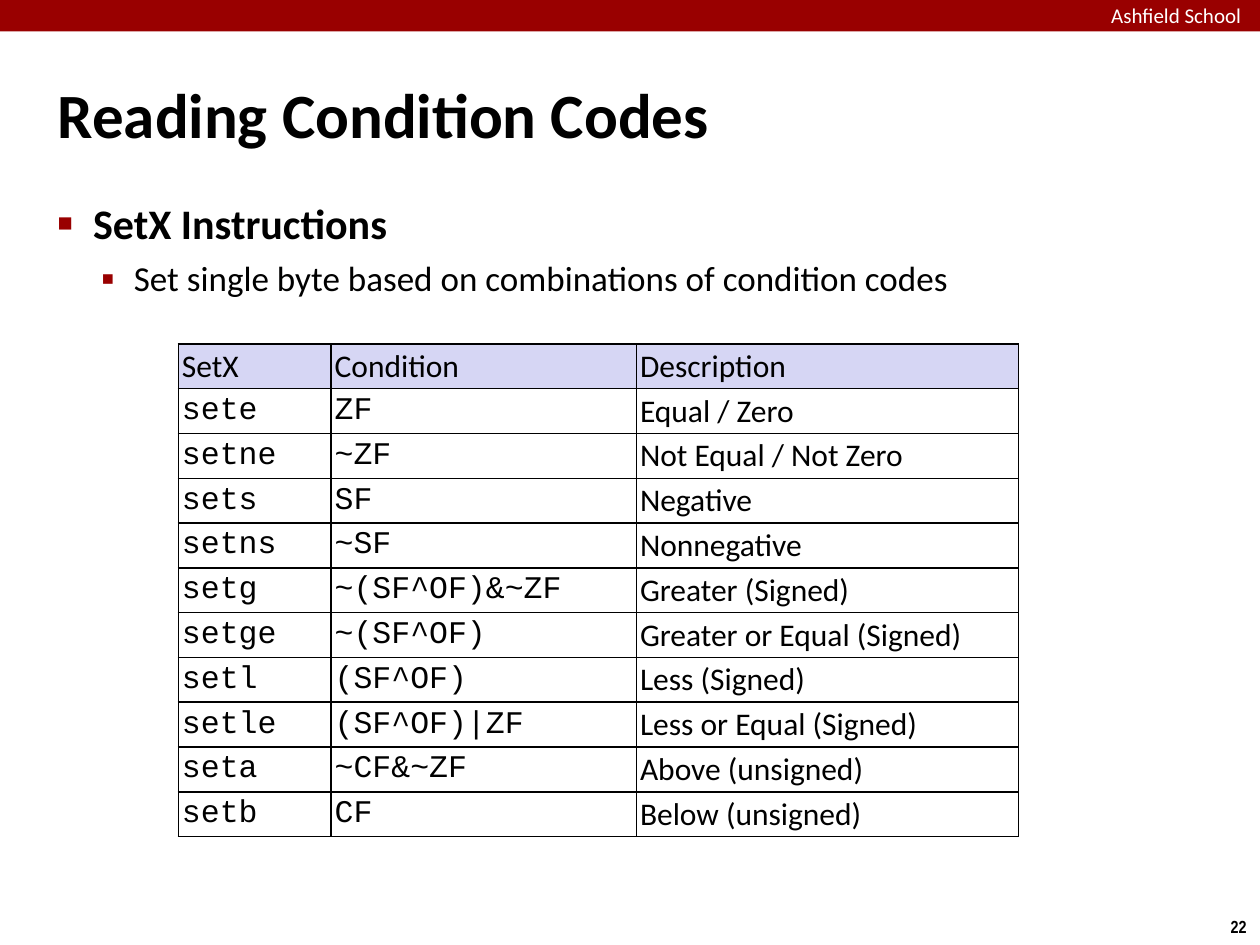
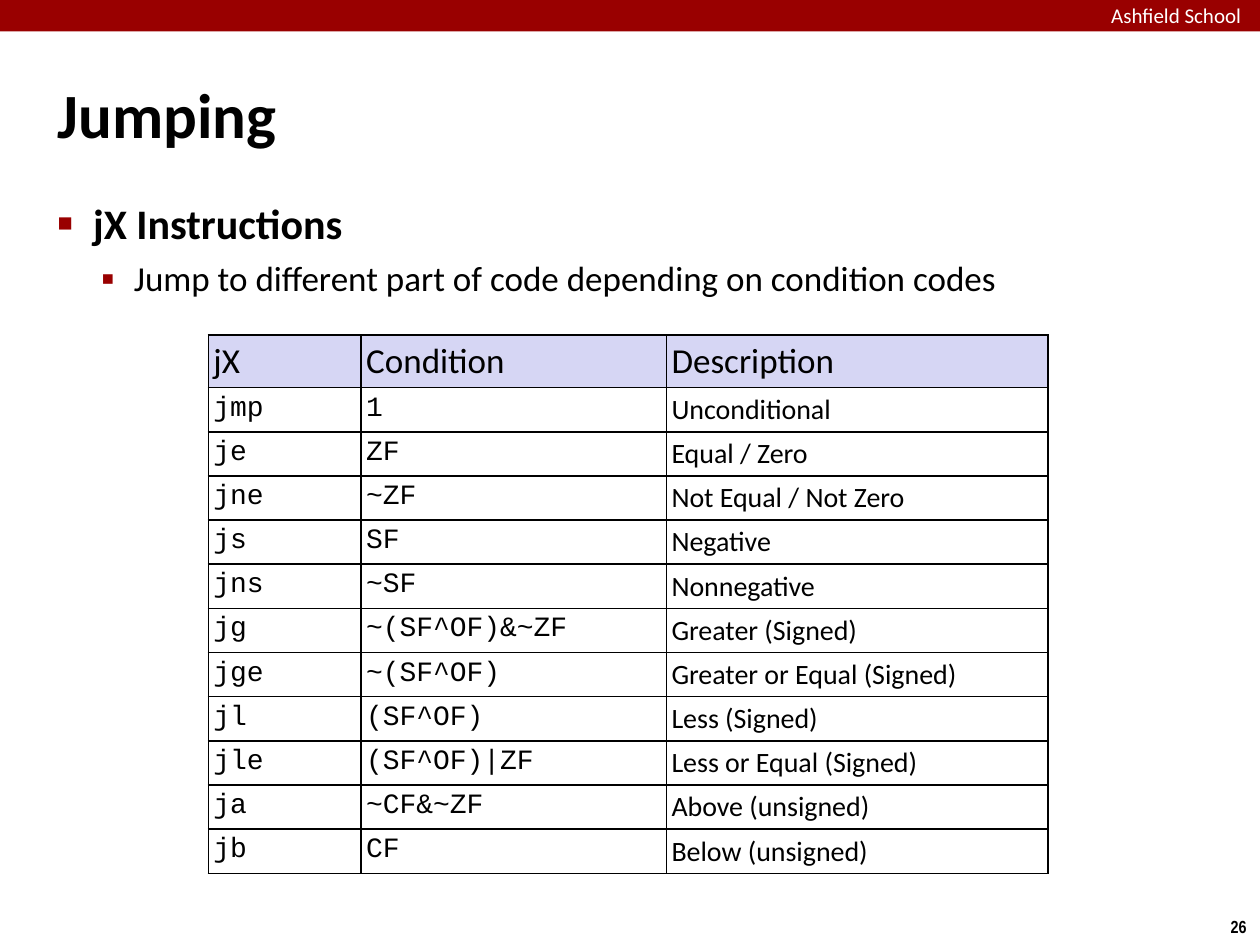
"""Build two slides that tabulate the set and jump instructions by condition code."""
from dataclasses import dataclass

from lxml import etree
from pptx import Presentation
from pptx import util as u
from pptx.dml.color import RGBColor
from pptx.enum import shapes, text
from pptx.oxml import ns

Pt = u.Pt

RED = RGBColor(0x99, 0x00, 0x00)
LAVENDER = RGBColor(0xD6, 0xD6, 0xF4)
BLACK = RGBColor(0x00, 0x00, 0x00)
WHITE = RGBColor(0xFF, 0xFF, 0xFF)

SANS = "Calibri"
MONO = "Courier New"
NARROW = "Arial Narrow"

SCHOOL = "Ashfield School"
COLUMN_WIDTHS = (87.3, 174.5, 218.2)
COLUMN_FONTS = (MONO, MONO, SANS)

CONDITIONS = (
    ("e", "ZF", "Equal / Zero"),
    ("ne", "~ZF", "Not Equal / Not Zero"),
    ("s", "SF", "Negative"),
    ("ns", "~SF", "Nonnegative"),
    ("g", "~(SF^OF)&~ZF", "Greater (Signed)"),
    ("ge", "~(SF^OF)", "Greater or Equal (Signed)"),
    ("l", "(SF^OF)", "Less (Signed)"),
    ("le", "(SF^OF)|ZF", "Less or Equal (Signed)"),
    ("a", "~CF&~ZF", "Above (unsigned)"),
    ("b", "CF", "Below (unsigned)"),
)


@dataclass(frozen=True)
class BulletLevel:
    """Look of one list level, with lengths in points."""
    indent: float
    hanging: float
    before: float
    char: str
    char_percent: int
    size: float
    bold: bool


@dataclass(frozen=True)
class InstructionTable:
    """Place, sizes and rows of an instruction table, in points."""
    left: float
    top: float
    family: str
    prefix: str
    extra_rows: tuple
    header_size: float
    header_height: float
    body_size: float
    row_height: float
    inset: float
    anchor: text.MSO_ANCHOR


@dataclass(frozen=True)
class InstructionSlide:
    """Content of one slide."""
    number: int
    title: str
    bullets: tuple
    body_height: float
    table: InstructionTable


LEVELS = (
    BulletLevel(20.25, 20.25, 6, "■", 60, 24, True),
    BulletLevel(43.5, 18.75, 5, "▪", 110, 20, False),
)

SLIDES = (
    InstructionSlide(
        22, "Reading Condition Codes",
        ("SetX Instructions",
         "Set single byte based on combinations of condition codes"),
        428,
        InstructionTable(102, 196.5, "SetX", "set", (), 18, 25.6, 18, 25.6, 2,
                         text.MSO_ANCHOR.MIDDLE)),
    InstructionSlide(
        26, "Jumping",
        ("jX Instructions",
         "Jump to different part of code depending on condition codes"),
        67.5,
        InstructionTable(119, 191.5, "jX", "j", (("mp", "1", "Unconditional"),),
                         20, 29.6, 16, 25.25, 3, text.MSO_ANCHOR.TOP)),
)


def add_run(p, content: str, size: float, font: str = SANS,
            color: RGBColor = BLACK, bold: bool = False) -> None:
    """Append a formatted run to a paragraph."""
    r = p.add_run()
    r.text = content
    r.font.size = Pt(size)
    r.font.name = font
    r.font.bold = bold
    r.font.color.rgb = color


def set_insets(target, inset: float) -> None:
    """Give a text frame or cell the same inset on every side."""
    target.margin_left = target.margin_right = Pt(inset)
    target.margin_top = target.margin_bottom = Pt(inset)


def set_indent(p, indent: float, hanging: float) -> None:
    """Set the left margin and hanging indent of a paragraph."""
    p_pr = p._p.get_or_add_pPr()
    p_pr.set("marL", str(int(Pt(indent))))
    p_pr.set("indent", str(-int(Pt(hanging))))


def set_bullet(p, level: BulletLevel) -> None:
    """Give a paragraph the bullet of its level."""
    p_pr = p._p.get_or_add_pPr()
    color = etree.SubElement(p_pr, ns.qn("a:buClr"))
    etree.SubElement(color, ns.qn("a:srgbClr"), val=str(RED))
    etree.SubElement(p_pr, ns.qn("a:buSzPct"), val=str(level.char_percent * 1000))
    etree.SubElement(p_pr, ns.qn("a:buFont"), typeface="Arial")
    etree.SubElement(p_pr, ns.qn("a:buChar"), char=level.char)


def set_borders(cell) -> None:
    """Draw a one-point black border around a cell."""
    tc_pr = cell._tc.get_or_add_tcPr()
    for side in ("lnL", "lnR", "lnT", "lnB"):
        ln = etree.SubElement(tc_pr, ns.qn(f"a:{side}"), w=str(int(Pt(1))))
        fill = etree.SubElement(ln, ns.qn("a:solidFill"))
        etree.SubElement(fill, ns.qn("a:srgbClr"), val=str(BLACK))


def place(sp, left: float, top: float, width: float, height: float):
    """Move and size a placeholder and return its text frame."""
    sp.left, sp.top, sp.width, sp.height = map(Pt, (left, top, width, height))
    tf = sp.text_frame
    tf.word_wrap = True
    tf.auto_size = text.MSO_AUTO_SIZE.NONE
    set_insets(tf, 3)
    return tf


def add_frame(s, number: int) -> None:
    """Draw the top band, the school name and the slide number."""
    band = s.shapes.add_shape(shapes.MSO_SHAPE.RECTANGLE, 0, 0, Pt(720), Pt(18))
    band.shadow.inherit = False
    band.fill.solid()
    band.fill.fore_color.rgb = RED
    band.line.fill.background()

    school = s.shapes.add_textbox(Pt(635), Pt(1.5), Pt(104), Pt(14))
    tf = school.text_frame
    tf.word_wrap = True
    set_insets(tf, 0)
    add_run(tf.paragraphs[0], SCHOOL, 12, color=WHITE)

    page = s.shapes.add_textbox(Pt(695.5), Pt(520), Pt(24.5), Pt(19.5))
    tf = page.text_frame
    tf.word_wrap = False
    tf.auto_size = text.MSO_AUTO_SIZE.SHAPE_TO_FIT_TEXT
    p = tf.paragraphs[0]
    p.alignment = text.PP_ALIGN.CENTER
    add_run(p, str(number), 10, NARROW, bold=True)


def add_title(s, title: str) -> None:
    """Fill the title placeholder."""
    tf = place(s.shapes.title, 30, 20, 660, 90)
    tf.vertical_anchor = text.MSO_ANCHOR.MIDDLE
    p = tf.paragraphs[0]
    p.alignment = text.PP_ALIGN.LEFT
    set_indent(p, 9, 9)
    add_run(p, title, 36, bold=True)


def add_bullets(s, bullets: tuple, height: float) -> None:
    """Fill the body placeholder, one list level per bullet."""
    tf = place(s.placeholders[1], 30, 110, 660, height)
    tf.vertical_anchor = text.MSO_ANCHOR.TOP
    for depth, (content, level) in enumerate(zip(bullets, LEVELS)):
        p = tf.add_paragraph() if depth else tf.paragraphs[0]
        p.level = depth
        p.space_before = Pt(level.before)
        set_indent(p, level.indent, level.hanging)
        set_bullet(p, level)
        add_run(p, content, level.size, bold=level.bold)


def add_instruction_table(s, spec: InstructionTable) -> None:
    """Draw a table of instructions with their conditions."""
    header = (spec.family, "Condition", "Description")
    body = [(spec.prefix + suffix, condition, description)
            for suffix, condition, description in spec.extra_rows + CONDITIONS]
    rows = [header, *body]
    height = spec.header_height + spec.row_height * len(body)
    table = s.shapes.add_table(len(rows), len(header), Pt(spec.left), Pt(spec.top),
                               Pt(sum(COLUMN_WIDTHS)), Pt(height)).table
    table.first_row = table.horz_banding = False
    for column, width in zip(table.columns, COLUMN_WIDTHS):
        column.width = Pt(width)
    for i, values in enumerate(rows):
        is_header = i == 0
        table.rows[i].height = Pt(spec.header_height if is_header else spec.row_height)
        for j, value in enumerate(values):
            cell = table.cell(i, j)
            set_insets(cell, spec.inset)
            cell.vertical_anchor = spec.anchor
            set_borders(cell)
            if is_header:
                cell.fill.solid()
                cell.fill.fore_color.rgb = LAVENDER
            else:
                cell.fill.background()
            add_run(cell.text_frame.paragraphs[0], value,
                    spec.header_size if is_header else spec.body_size,
                    SANS if is_header else COLUMN_FONTS[j])


def main() -> None:
    """Build and save the presentation."""
    prs = Presentation()
    prs.slide_width, prs.slide_height = Pt(720), Pt(540)
    for content in SLIDES:
        s = prs.slides.add_slide(prs.slide_layouts[1])
        add_frame(s, content.number)
        add_title(s, content.title)
        add_bullets(s, content.bullets, content.body_height)
        add_instruction_table(s, content.table)
    prs.save("out.pptx")


if __name__ == "__main__":
    main()
